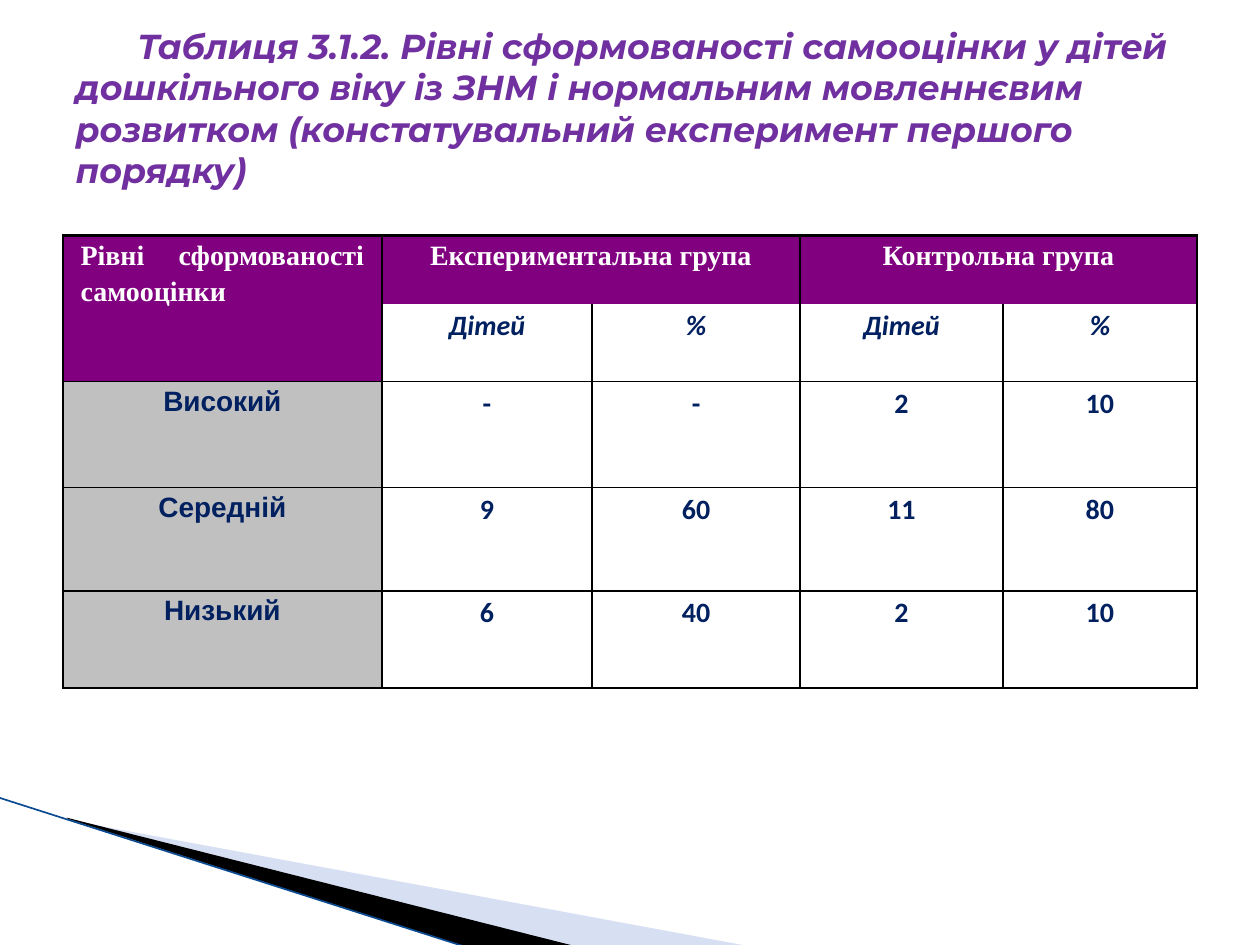
import lxml.etree
import pptx
import pptx.dml.color
import pptx.enum.shapes
import pptx.enum.text
import pptx.oxml.ns
import pptx.util

Inches = pptx.util.Inches
Pt = pptx.util.Pt
ALIGN = pptx.enum.text.PP_ALIGN
qn = pptx.oxml.ns.qn

COLORS = {
    "title": "7030A0", "header": "800080", "label": "C0C0C0", "text": "002060",
    "light": "FFFFFF", "border": "000000", "pale": "9DB2E1", "dark": "000000",
    "edge": "0B4A90",
}
TITLE = ("Таблиця 3.1.2. Рівні сформованості самооцінки у дітей дошкільного віку "
         "із ЗНМ і нормальним мовленнєвим розвитком (констатувальний експеримент "
         "першого порядку)")
ROWS = [
    ["Рівні сформованості самооцінки", "Експериментальна група", "",
     "Контрольна група", ""],
    ["", "Дітей", "%", "Дітей", "%"],
    ["Високий", "-", "-", "2", "10"],
    ["Середній", "9", "60", "11", "80"],
    ["Низький", "6", "40", "2", "10"],
]
COLUMN_WIDTHS = [2.53, 1.67, 1.65, 1.61, 1.54]
ROW_HEIGHTS = [0.54, 0.62, 0.84, 0.82, 0.77]
MERGES = [((0, 0), (1, 0)), ((0, 1), (0, 2)), ((0, 3), (0, 4))]


def rgb(name):
    """Return the named colour."""
    return pptx.dml.color.RGBColor.from_string(COLORS[name])


def apply(target, values):
    """Set each named attribute of the target."""
    for name, value in values.items():
        setattr(target, name, value)


def place(shape, box):
    """Move and size a shape to a box given in inches."""
    apply(shape, dict(zip(("left", "top", "width", "height"), map(Inches, box))))


def add_font(para, color, **values):
    """Format the font of a paragraph's spans."""
    for span in para.runs:
        apply(span.font, values)
        span.font.color.rgb = rgb(color)


def set_frame(wedge, box):
    """Give a wedge a new frame while its outline stays in place."""
    shift_x, shift_y = wedge.left - Inches(box[0]), wedge.top - Inches(box[1])
    place(wedge, box)
    for outline in wedge._element.iter(qn("a:path")):
        outline.set("w", str(wedge.width))
        outline.set("h", str(wedge.height))
        for point in outline.iter(qn("a:pt")):
            point.set("x", str(int(point.get("x")) + shift_x))
            point.set("y", str(int(point.get("y")) + shift_y))


def add_wedge(page, frame, points, color, opacity=100):
    """Draw a filled wedge through points given in inches."""
    corners = [(Inches(x), Inches(y)) for x, y in points]
    builder = page.shapes.build_freeform(*corners[0], scale=1.0)
    builder.add_line_segments(corners[1:], close=True)
    wedge = builder.convert_to_shape()
    set_frame(wedge, frame)
    wedge.shadow.inherit = False
    wedge.fill.solid()
    wedge.fill.fore_color.rgb = rgb(color)
    wedge.line.fill.background()
    if opacity < 100:
        tint = wedge.fill._xPr.find(".//" + qn("a:srgbClr"))
        lxml.etree.SubElement(tint, qn("a:alpha")).set("val", str(opacity * 1000))


def add_corner(page, box):
    """Draw the wedges and edge line in the lower left corner."""
    left, top, width, height = box
    right, bottom = left + width, top + height
    add_wedge(page, (left + 0.78, top - 0.86, 4.16, 1.58),
              [(left + 0.55, top + 0.18), (right, bottom), (left + 4.56, bottom),
               (left + 0.55, top + 0.17)], "pale", 40)
    add_wedge(page, (left - 0.06, top, 4.16, 0.92),
              [(left + 0.53, top + 0.16), (left + 4.57, bottom),
               (left + 3.72, bottom + 0.01), (left + 0.54, top + 0.17)], "dark")
    edge = page.shapes.add_connector(
        pptx.enum.shapes.MSO_CONNECTOR.STRAIGHT,
        Inches(left - 0.01), Inches(top), Inches(left + 3.71), Inches(bottom + 0.01))
    edge.line.color.rgb = rgb("edge")
    edge.line.width = Pt(0.95)
    lxml.etree.SubElement(edge._element.spPr, qn("a:effectLst"))


def add_title(page, box):
    """Place and format the title."""
    title = page.shapes.title
    place(title, box)
    frame = title.text_frame
    frame.text = TITLE
    apply(frame, {
        "word_wrap": True, "auto_size": pptx.enum.text.MSO_AUTO_SIZE.NONE,
        "vertical_anchor": pptx.enum.text.MSO_ANCHOR.MIDDLE,
        "margin_top": Inches(0.05), "margin_bottom": Inches(0.67),
    })
    para = frame.paragraphs[0]
    para.alignment = ALIGN.LEFT
    properties = para._p.get_or_add_pPr()
    properties.set("marL", "0")
    properties.set("indent", str(Inches(0.49)))
    add_font(para, "title", name="Montserrat", size=Pt(19.8), bold=True, italic=True)


def add_borders(cell, widths):
    """Draw the cell's sides, leaving out those of zero width."""
    properties = cell._tc.get_or_add_tcPr()
    for side in "LRTB":
        line = lxml.etree.SubElement(properties, qn("a:ln" + side))
        line.set("w", str(Pt(widths[side])))
        if widths[side]:
            fill = lxml.etree.SubElement(line, qn("a:solidFill"))
            lxml.etree.SubElement(fill, qn("a:srgbClr")).set("val", COLORS["border"])
        else:
            lxml.etree.SubElement(line, qn("a:noFill"))


def format_cell(cell, row, column):
    """Give a cell its borders, fill and text by its place in the grid."""
    header = row == 0 or (row == 1 and column == 0)
    apply(cell, {"margin_left": Inches(0.14), "margin_right": Inches(0.14),
                 "margin_top": 0, "margin_bottom": 0})
    widths = dict.fromkeys("LRTB", 1)
    if row == 0:
        widths.update(T=1.5, B=0)
    elif row == 1:
        widths["T"] = 0
    elif row == len(ROWS) - 1:
        widths["B"] = 1.5
    add_borders(cell, widths)
    if header or column == 0:
        cell.fill.solid()
        cell.fill.fore_color.rgb = rgb("header" if header else "label")
    else:
        cell.fill.background()
    if not ROWS[row][column]:
        return
    cell.text = ROWS[row][column]
    para = cell.text_frame.paragraphs[0]
    apply(para, {"alignment": ALIGN.JUSTIFY if header and column == 0 else ALIGN.CENTER,
                 "line_spacing": 1.15, "space_after": Pt(10)})
    name = "Times New Roman" if header else "Calibri" if column else "Arial"
    add_font(para, "light" if header else "text", name=name, size=Pt(16),
             bold=True, italic=row == 1)


def add_levels_table(page, box):
    """Build the table of self-esteem levels."""
    frame = page.shapes.add_table(len(ROWS), len(COLUMN_WIDTHS), *map(Inches, box))
    table = frame.table
    apply(table, {"first_row": False, "horz_banding": False})
    for column, width in zip(table.columns, COLUMN_WIDTHS):
        column.width = Inches(width)
    for row, height in zip(table.rows, ROW_HEIGHTS):
        row.height = Inches(height)
    for first, last in MERGES:
        table.cell(*first).merge(table.cell(*last))
    for row in range(len(ROWS)):
        for column in range(len(COLUMN_WIDTHS)):
            format_cell(table.cell(row, column), row, column)


def main():
    """Build and save the deck."""
    deck = pptx.Presentation()
    apply(deck, {"slide_width": Inches(10), "slide_height": Inches(7.5)})
    page = deck.slides.add_slide(deck.slide_layouts[5])
    add_corner(page, (0, 6.33, 5.95, 1.18))
    add_levels_table(page, (0.5, 1.87, 9, 3.59))
    add_title(page, (0.5, 0.78, 9, 0.77))
    deck.save("out.pptx")


if __name__ == "__main__":
    main()
